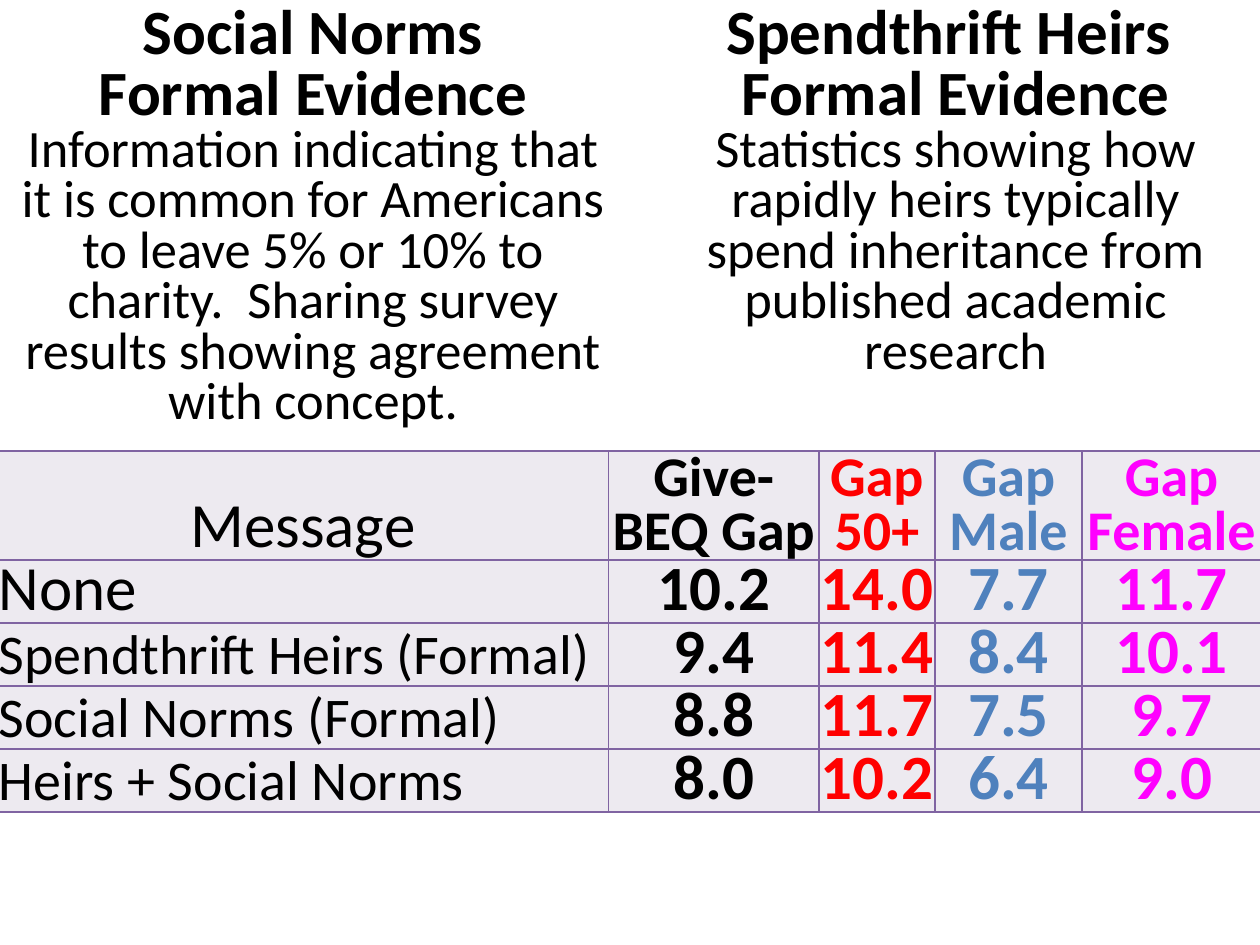
from lxml import etree
from pptx import Presentation
from pptx.dml.color import RGBColor
from pptx.enum import text
from pptx.oxml import ns
from pptx.util import Inches, Pt

BLACK = "000000"
FILL = "EDEAF0"
EDGE = "8064A2"
INKS = [BLACK, BLACK, "FF0000", "4F81BD", "FF00FF"]
COLS = [4.85, 1.67, 0.92, 1.17, 1.42]
ROWS = [0.86, 0.5, 0.5, 0.5, 0.5]
DATA = [
    ["Message", "Give-BEQ Gap", "Gap 50+", "Gap Male", "Gap Female"],
    ["None", "10.2", "14.0", "7.7", "11.7"],
    ["Spendthrift Heirs (Formal)", "9.4", "11.4", "8.4", "10.1"],
    ["Social Norms (Formal)", "8.8", "11.7", "7.5", "9.7"],
    ["Heirs + Social Norms", "8.0", "10.2", "6.4", "9.0"],
]
NORMS = [
    "Social Norms",
    "Formal Evidence",
    "Information indicating that it is common for Americans to leave 5% or 10% "
    "to charity.  Sharing survey results showing agreement with concept.",
]
HEIRS = [
    "Spendthrift Heirs ",
    "Formal Evidence",
    "Statistics showing how rapidly heirs typically spend inheritance from "
    "published academic research",
]


def color(code):
    """Turn a hex string into a colour."""
    return RGBColor.from_string(code)


def style(para, size, bold, ink=BLACK, center=True):
    """Format one paragraph and its runs."""
    para.alignment = text.PP_ALIGN.CENTER if center else text.PP_ALIGN.LEFT
    para.line_spacing = 0.8
    for run in para.runs:
        font = run.font
        font.name = "Calibri"
        font.size = Pt(size)
        font.bold = bold
        font.color.rgb = color(ink)


def add_note(slide, left, width, height, lines):
    """Add a text box with bold heading lines above a plain summary."""
    box = slide.shapes.add_textbox(Inches(left), 0, Inches(width), Inches(height))
    frame = box.text_frame
    frame.word_wrap = True
    frame.text = "\n".join(lines)
    *heads, body = frame.paragraphs
    for head in heads:
        style(head, 36, True)
    style(body, 30, False)


def add_edges(cell):
    """Draw a thin line on all four sides of a cell."""
    props = cell._tc.get_or_add_tcPr()
    for spot, side in enumerate("LRTB"):
        line = etree.Element(ns.qn(f"a:ln{side}"), w=str(Pt(1)))
        fill = etree.SubElement(line, ns.qn("a:solidFill"))
        etree.SubElement(fill, ns.qn("a:srgbClr"), val=EDGE)
        props.insert(spot, line)


def fill_cell(cell, value, row, col):
    """Set the text and look of a cell by its place in the table."""
    cell.text = value
    cell.vertical_anchor = text.MSO_ANCHOR.BOTTOM
    cell.margin_left = cell.margin_right = cell.margin_top = Inches(0.01)
    cell.margin_bottom = 0
    cell.fill.solid()
    cell.fill.fore_color.rgb = color(FILL)
    add_edges(cell)
    small = row > 1 if col == 0 else row == 0
    style(cell.text_frame.paragraphs[0], 32 if small else 36, col > 0,
          INKS[col], row == 0 or col > 0)


def add_gaps(slide):
    """Add the table of gaps by message."""
    frame = slide.shapes.add_table(
        len(ROWS), len(COLS), Inches(-0.02), Inches(3.58),
        Inches(sum(COLS)), Inches(sum(ROWS)))
    table = frame.table
    for col, width in zip(table.columns, COLS):
        col.width = Inches(width)
    for row, height in zip(table.rows, ROWS):
        row.height = Inches(height)
    for row, values in enumerate(DATA):
        for col, value in enumerate(values):
            fill_cell(table.cell(row, col), value, row, col)


def main():
    """Build and save the slide."""
    deck = Presentation()
    deck.slide_width, deck.slide_height = Inches(10), Inches(7.5)
    slide = deck.slides.add_slide(deck.slide_layouts[6])
    add_note(slide, -0.02, 5.01, 3.49, NORMS)
    add_note(slide, 5.2, 4.77, 3.09, HEIRS)
    add_gaps(slide)
    deck.save("out.pptx")


if __name__ == "__main__":
    main()
